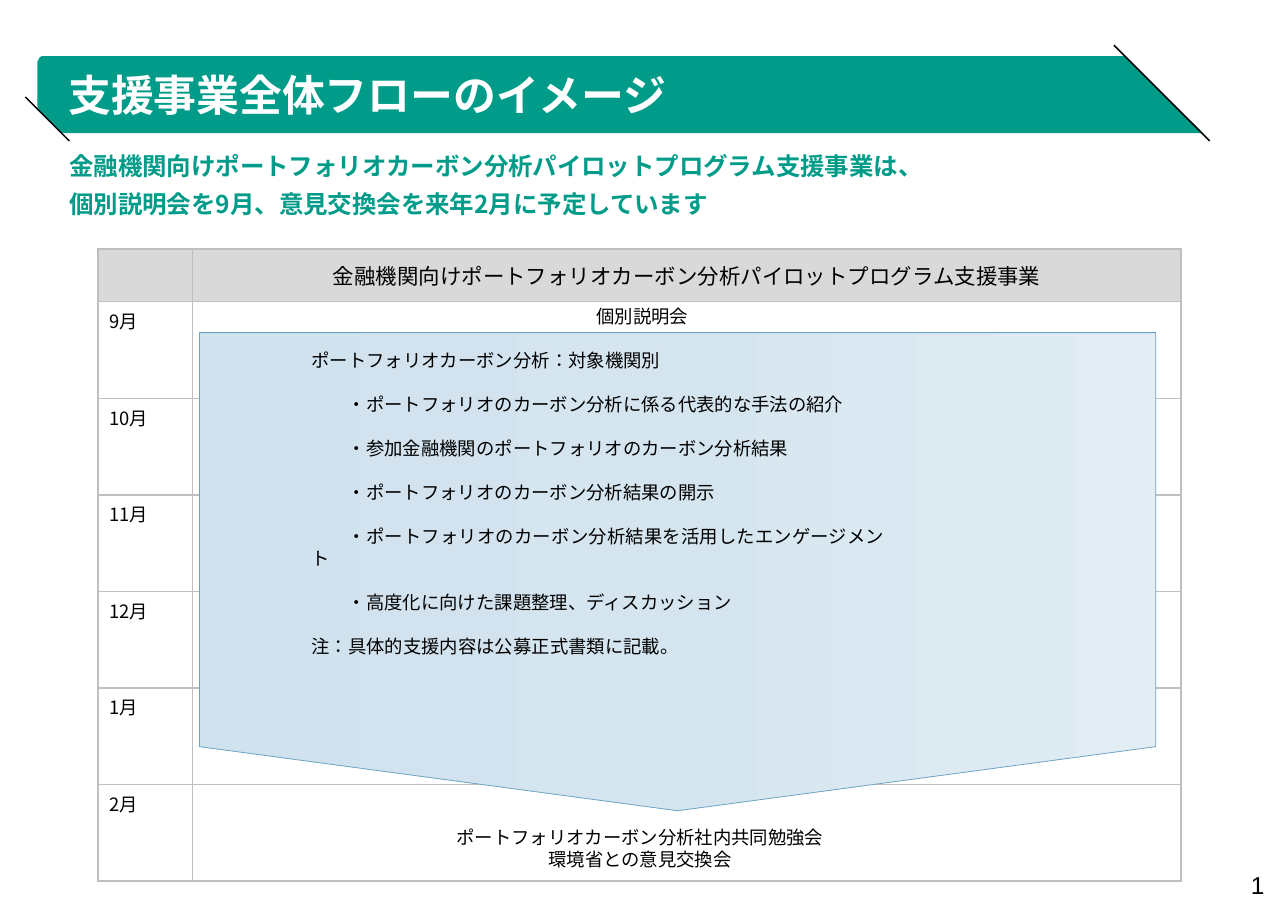
from dataclasses import dataclass

import lxml.etree
import pptx
import pptx.dml.color
import pptx.enum.lang
import pptx.enum.shapes
import pptx.enum.text
import pptx.oxml.ns
import pptx.util

Inches = pptx.util.Inches
Pt = pptx.util.Pt
RGBColor = pptx.dml.color.RGBColor
Align = pptx.enum.text.PP_ALIGN
Anchor = pptx.enum.text.MSO_ANCHOR
qn = pptx.oxml.ns.qn

GREEN = RGBColor(0x00, 0x9C, 0x89)
WHITE = RGBColor(0xFF, 0xFF, 0xFF)
BLACK = RGBColor(0x00, 0x00, 0x00)
HEAD = RGBColor(0xD9, 0xD9, 0xD9)
GRID = RGBColor(0xBF, 0xBF, 0xBF)
EDGE = RGBColor(0x6C, 0xA4, 0xC5)
BLUES = {0: RGBColor(0xE2, 0xED, 0xF4), 50: RGBColor(0xD5, 0xE5, 0xEF),
         100: RGBColor(0xCF, 0xE2, 0xEE)}
SANS = "Noto Sans CJK JP"


@dataclass
class Line:
    text: str
    indent: float = 0


@dataclass
class Note:
    box: tuple
    lines: list
    style: dict
    pads: tuple = (0.1, 0.05, 0.1, 0.05)
    anchor: Anchor = Anchor.TOP
    wrap: bool = True


def write(frame, lines: list, *, size=12, color=BLACK, bold=False, face=SANS,
          align=Align.LEFT, pitch=None, before=0) -> None:
    for i, line in enumerate(lines):
        para = frame.paragraphs[0] if i == 0 else frame.add_paragraph()
        para.alignment = align
        if pitch:
            para.line_spacing = pitch
        if i and before:
            para.space_before = Pt(before)
        if line.indent:
            props = para._p.get_or_add_pPr()
            props.set("marL", "0")
            props.set("indent", str(Inches(line.indent)))
        run = para.add_run()
        run.text = line.text
        font = run.font
        font.size, font.bold, font.name = Pt(size), bold, face
        font.color.rgb = color
        font.language_id = pptx.enum.lang.MSO_LANGUAGE_ID.JAPANESE
        east = lxml.etree.SubElement(run._r.get_or_add_rPr(), qn("a:ea"))
        east.set("typeface", face)


def add_note(shapes, note: Note) -> None:
    frame = shapes.add_textbox(*map(Inches, note.box)).text_frame
    frame.word_wrap = note.wrap
    frame.vertical_anchor = note.anchor
    (frame.margin_left, frame.margin_top,
     frame.margin_right, frame.margin_bottom) = map(Inches, note.pads)
    write(frame, note.lines, **note.style)


def add_slash(shapes, ends: tuple) -> None:
    line = shapes.add_connector(pptx.enum.shapes.MSO_CONNECTOR.STRAIGHT, *map(Inches, ends))
    line.line.color.rgb = BLACK
    line.line.width = Pt(1)
    lxml.etree.SubElement(line._element.spPr, qn("a:effectLst"))


def add_band(shapes) -> None:
    edge = [(0.41, 0.51), (10.21, 0.51), (10.92, 1.21), (0.57, 1.21), (0.39, 1.04),
            (0.34, 1), (0.34, 0.56), (0.36, 0.52), (0.38, 0.51)]
    points = [(Inches(x), Inches(y)) for x, y in edge]
    form = shapes.build_freeform(*points[0])
    form.add_line_segments(points[1:], close=True)
    band = form.convert_to_shape()
    band.shadow.inherit = False
    band.fill.solid()
    band.fill.fore_color.rgb = GREEN
    band.line.fill.background()


def frame_cell(cell) -> None:
    props = cell._tc.get_or_add_tcPr()
    for i, side in enumerate(("lnL", "lnR", "lnT", "lnB")):
        line = lxml.etree.Element(qn(f"a:{side}"), w=str(Pt(1)))
        fill = lxml.etree.SubElement(line, qn("a:solidFill"))
        lxml.etree.SubElement(fill, qn("a:srgbClr"), val=str(GRID))
        props.insert(i, line)


def add_grid(shapes, title: str, months: list) -> None:
    top, month = 0.48, (5.74 - 0.48) / len(months)
    box = map(Inches, (0.89, 2.26, 9.83, 5.74))
    table = shapes.add_table(len(months) + 1, 2, *box).table
    table.first_row = table.horz_banding = False
    for col, width in zip(table.columns, (0.86, 8.97)):
        col.width = Inches(width)
    for i, row in enumerate(table.rows):
        row.height = Inches(month if i else top)
        for cell in row.cells:
            if i:
                cell.fill.background()
            else:
                cell.fill.solid()
                cell.fill.fore_color.rgb = HEAD
            frame_cell(cell)
    head = table.cell(0, 1)
    head.vertical_anchor = Anchor.MIDDLE
    write(head.text_frame, [Line(title)], size=14, align=Align.CENTER)
    for i, name in enumerate(months, 1):
        write(table.cell(i, 0).text_frame, [Line(name)])


def add_arrow(shapes) -> None:
    box = map(Inches, (3.98, 0.85, 4.34, 8.68))
    arrow = shapes.add_shape(pptx.enum.shapes.MSO_SHAPE.PENTAGON, *box)
    arrow.rotation = 90
    arrow.adjustments[0] = 0.134
    arrow.shadow.inherit = False
    arrow.line.color.rgb = EDGE
    arrow.line.width = Pt(0.5)
    arrow.fill.gradient()
    arrow.fill.gradient_angle = 270
    stops = arrow._element.spPr.find(f".//{qn('a:gsLst')}")
    for stop in list(stops):
        stops.remove(stop)
    for place, color in BLUES.items():
        stop = lxml.etree.SubElement(stops, qn("a:gs"), pos=str(place * 1000))
        lxml.etree.SubElement(stop, qn("a:srgbClr"), val=str(color))


def main() -> None:
    deck = pptx.Presentation()
    deck.slide_width, deck.slide_height = Inches(11.69), Inches(8.27)
    shapes = deck.slides.add_slide(deck.slide_layouts[6]).shapes

    # Title band with its two slashes
    add_band(shapes)
    for ends in ((10.11, 0.41, 10.98, 1.28), (0.23, 0.88, 0.63, 1.28)):
        add_slash(shapes, ends)

    # Schedule and the arrow across it
    add_grid(shapes, "金融機関向けポートフォリオカーボン分析パイロットプログラム支援事業",
             ["9月", "10月", "11月", "12月", "1月", "2月"])
    add_arrow(shapes)

    # Texts
    small = dict(pitch=Pt(14.4))
    mid = dict(small, align=Align.CENTER)
    notes = [
        Note((0.34, 0.51, 9.76, 0.71), [Line("支援事業全体フローのイメージ")],
             dict(size=28, color=WHITE, bold=True, pitch=0.9),
             (0.28, 0.04, 0, 0), Anchor.MIDDLE),
        Note((0.63, 1.22, 10.28, 0.94),
             [Line("金融機関向けポートフォリオカーボン分析パイロットプログラム支援事業は、"),
              Line("個別説明会を9月、意見交換会を来年2月に予定しています")],
             dict(size=16, color=GREEN, bold=True, pitch=Pt(18.8), before=6),
             (0, 0.16, 0, 0)),
        Note((2.73, 3.12, 5.4, 2.73),
             [Line("ポートフォリオカーボン分析：対象機関別"),
              Line("・ポートフォリオのカーボン分析に係る代表的な手法の紹介", 0.33),
              Line("・参加金融機関のポートフォリオのカーボン分析結果", 0.33),
              Line("・ポートフォリオのカーボン分析結果の開示", 0.33),
              Line("・ポートフォリオのカーボン分析結果を活用したエンゲージメント", 0.33),
              Line("・高度化に向けた課題整理、ディスカッション", 0.33),
              Line("注：具体的支援内容は公募正式書類に記載。")],
             dict(small, align=Align.JUSTIFY, before=14.4)),
        Note((3.7, 2.72, 4.26, 0.3), [Line("個別説明会")], mid),
        Note((3.68, 7.45, 4.26, 0.5),
             [Line("ポートフォリオカーボン分析社内共同勉強会"), Line("環境省との意見交換会")], mid),
        Note((11.29, 7.93, 0.25, 0.21), [Line("1")],
             dict(size=16, face="Arial", align=Align.CENTER),
             (0, 0, 0, 0), Anchor.MIDDLE, False),
    ]
    for note in notes:
        add_note(shapes, note)

    deck.save("out.pptx")


if __name__ == "__main__":
    main()
